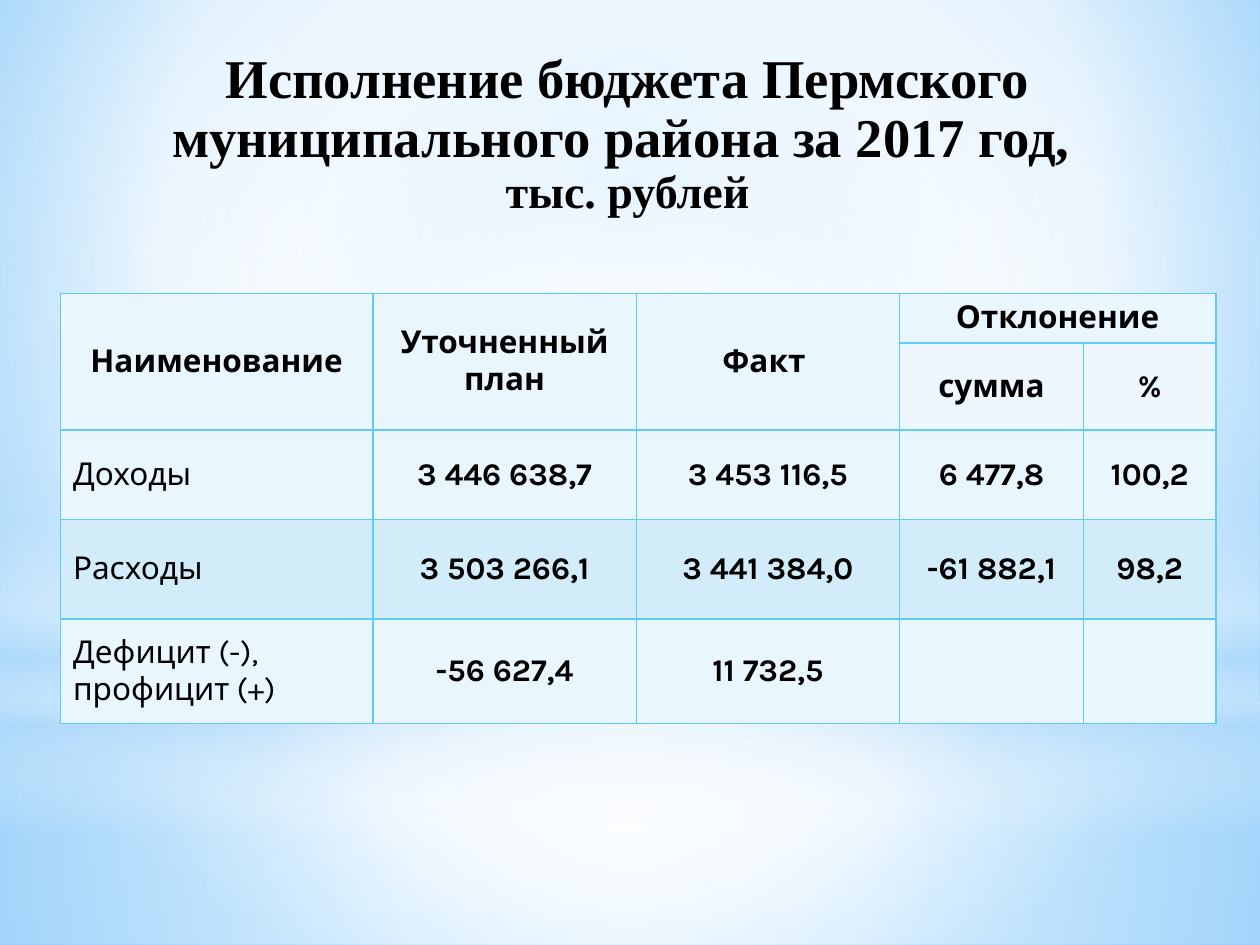
import pptx
import pptx.dml.color
import pptx.enum.shapes
import pptx.enum.text
import pptx.oxml
import pptx.oxml.ns
import pptx.util

Inches, Pt = pptx.util.Inches, pptx.util.Pt
RGBColor = pptx.dml.color.RGBColor
MSO_SHAPE = pptx.enum.shapes.MSO_SHAPE
PP_ALIGN = pptx.enum.text.PP_ALIGN
MIDDLE = pptx.enum.text.MSO_ANCHOR.MIDDLE
qn, nsdecls = pptx.oxml.ns.qn, pptx.oxml.ns.nsdecls

WIDTH, HEIGHT = 10, 7.5
BLACK = RGBColor(0, 0, 0)
WHITE = RGBColor(0xFF, 0xFF, 0xFF)
SKY = RGBColor(0xB4, 0xDC, 0xFA)
LIGHT_BLUE = RGBColor(0x9E, 0xD5, 0xFF)
STRONG_BLUE = RGBColor(0x5B, 0xB9, 0xFF)
BORDER = RGBColor(0x5E, 0xCC, 0xF3)
ROW_LIGHT = RGBColor(0xEA, 0xF6, 0xFD)
ROW_DARK = RGBColor(0xD2, 0xEC, 0xFA)
ROW_PALE = RGBColor(0xED, 0xF7, 0xFD)

CENTER = (50, 50, 50, 50)
# Shape, box, gradient stops (position, colour, opacity), focus or None if linear
GLOWS = [
    (MSO_SHAPE.RECTANGLE, (0, 5.58, WIDTH, 1.92),
     [(0, WHITE, 91), (37, WHITE, 76), (100, SKY, 79)], CENTER),
    (MSO_SHAPE.RECTANGLE, (0, 0, WIDTH, 5.58),
     [(0, WHITE, 89), (48, WHITE, 62), (100, SKY, 79)], CENTER),
    (MSO_SHAPE.RECTANGLE, (0, 4.12, WIDTH, 2.5),
     [(0, WHITE, 0), (29, WHITE, 30), (45, SKY, 40), (55, WHITE, 26),
      (65, SKY, 60), (100, WHITE, 0)], None),
    (MSO_SHAPE.OVAL, (0, 1.75, WIDTH, 5.58),
     [(0, WHITE, 100), (56, WHITE, 0)], CENTER),
]

TITLE_LINES = [
    (" Исполнение бюджета Пермского ", 31.2),
    ("муниципального района за 2017 год, ", 31.2),
    ("тыс. рублей", 26.3),
]

COLUMNS = [2.48, 2.09, 2.09, 1.46, 1.05]
ROWS = [0.39, 0.69, 0.71, 0.79, 0.83]
ROW_FILLS = [ROW_LIGHT, ROW_PALE, ROW_LIGHT, ROW_DARK, ROW_LIGHT]
HEADER_ROWS = 2
BUDGET = [
    ["Наименование", "Уточненный план", "Факт ", "Отклонение", ""],
    ["", "", "", "сумма", "%"],
    ["Доходы", "3 446 638,7", "3 453 116,5", "6 477,8", "100,2"],
    ["Расходы", "3 503 266,1", "3 441 384,0", "-61 882,1", "98,2"],
    ["Дефицит (-), профицит (+)", "-56 627,4", "11 732,5", "", ""],
]
MERGES = [((0, 0), (1, 0)), ((0, 1), (1, 1)), ((0, 2), (1, 2)), ((0, 3), (0, 4))]


def apply_format(target, values):
    for name, value in values.items():
        setattr(target, name, value)


def write_run(paragraph, text, size, font_name, bold):
    run = paragraph.add_run()
    run.text = text
    apply_format(run.font, {"size": Pt(size), "name": font_name, "bold": bold})
    run.font.color.rgb = BLACK


def set_gradient(fill, element, stops, focus):
    """Give the element a gradient: circular around focus, or top to bottom."""
    fill.gradient()
    stop_xml = "".join(
        f'<a:gs pos="{position * 1000}"><a:srgbClr val="{color}">'
        f'<a:alpha val="{opacity * 1000}"/></a:srgbClr></a:gs>'
        for position, color, opacity in stops)
    if focus:
        sides = " ".join(f'{side}="{share * 1000}"' for side, share in zip("ltrb", focus))
        direction = f'<a:path path="circle"><a:fillToRect {sides}/></a:path>'
    else:
        direction = '<a:lin ang="5400000" scaled="0"/>'
    gradient = pptx.oxml.parse_xml(
        f'<a:gradFill {nsdecls("a")} rotWithShape="1"><a:gsLst>{stop_xml}</a:gsLst>'
        f'{direction}</a:gradFill>')
    previous = element.find(".//" + qn("a:gradFill"))
    previous.getparent().replace(previous, gradient)


def add_backdrop(slide):
    stops = [(0, LIGHT_BLUE, 100), (60, WHITE, 100), (100, STRONG_BLUE, 100)]
    set_gradient(slide.background.fill, slide.element, stops, (20, 10, 20, 60))
    for kind, box, stops, focus in GLOWS:
        glow = slide.shapes.add_shape(kind, *map(Inches, box))
        glow.shadow.inherit = False
        glow.line.fill.background()
        set_gradient(glow.fill, glow.element, stops, focus)


def set_borders(cell):
    properties = cell._tc.get_or_add_tcPr()
    for side in ("lnL", "lnR", "lnT", "lnB"):
        properties.append(pptx.oxml.parse_xml(
            f'<a:{side} {nsdecls("a")} w="{Pt(1)}"><a:solidFill>'
            f'<a:srgbClr val="{BORDER}"/></a:solidFill></a:{side}>'))


def add_budget_table(slide, left, top):
    box = map(Inches, (left, top, sum(COLUMNS), sum(ROWS)))
    table = slide.shapes.add_table(len(ROWS), len(COLUMNS), *box).table
    for column, width in zip(table.columns, COLUMNS):
        column.width = Inches(width)
    for row, height in zip(table.rows, ROWS):
        row.height = Inches(height)
    for first, last in MERGES:
        table.cell(*first).merge(table.cell(*last))

    for row_index, values in enumerate(BUDGET):
        for column_index, text in enumerate(values):
            cell = table.cell(row_index, column_index)
            set_borders(cell)
            cell.fill.solid()
            cell.fill.fore_color.rgb = ROW_FILLS[row_index]
            cell.vertical_anchor = MIDDLE
            is_label = row_index >= HEADER_ROWS and column_index == 0
            paragraph = cell.text_frame.paragraphs[0]
            paragraph.alignment = PP_ALIGN.LEFT if is_label else PP_ALIGN.CENTER
            if text:
                write_run(paragraph, text, 18, "Karla", not is_label)


def place_title(slide, left, top, width, height):
    title = slide.shapes.title
    apply_format(title, {"left": Inches(left), "top": Inches(top),
                         "width": Inches(width), "height": Inches(height)})
    frame = title.text_frame
    apply_format(frame, {"word_wrap": True, "vertical_anchor": MIDDLE,
                         "auto_size": pptx.enum.text.MSO_AUTO_SIZE.NONE})
    for index, (text, size) in enumerate(TITLE_LINES):
        paragraph = frame.add_paragraph() if index else frame.paragraphs[0]
        apply_format(paragraph, {"alignment": PP_ALIGN.CENTER, "line_spacing": 0.9,
                                 "space_before": Pt(0)})
        write_run(paragraph, text, size, "Times New Roman", True)
    # Bring the title in front of the backdrop
    title.element.getparent().append(title.element)


def main():
    presentation = pptx.Presentation()
    apply_format(presentation, {"slide_width": Inches(WIDTH),
                                "slide_height": Inches(HEIGHT)})
    slide = presentation.slides.add_slide(presentation.slide_layouts[5])
    add_backdrop(slide)
    add_budget_table(slide, 0.48, 2.33)
    place_title(slide, 0.48, 0.33, 9, 1.48)
    presentation.save("out.pptx")


if __name__ == "__main__":
    main()
